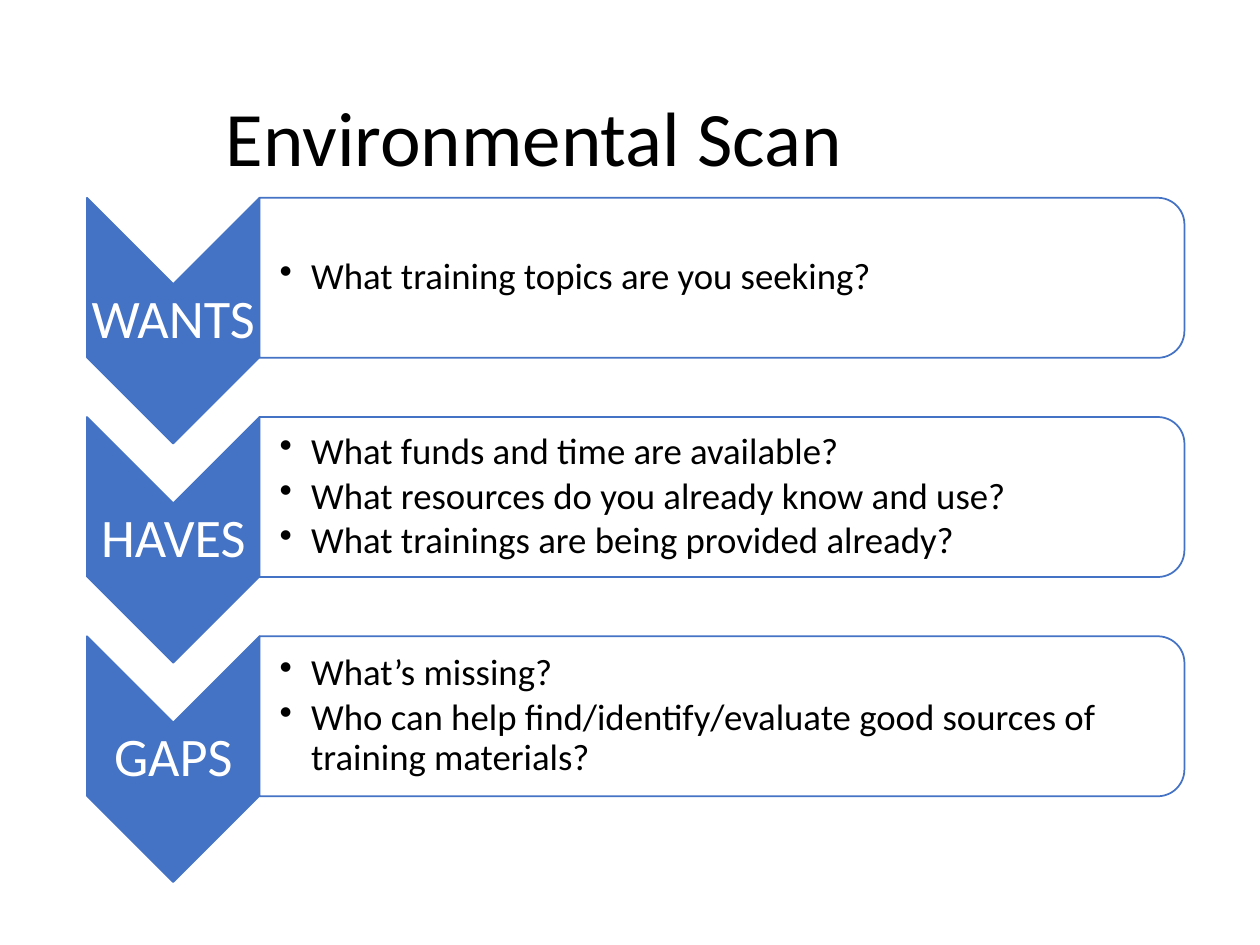
from dataclasses import dataclass

from lxml import etree
from pptx import Presentation
from pptx.dml.color import RGBColor
from pptx.enum.shapes import MSO_SHAPE
from pptx.enum.text import MSO_ANCHOR, PP_ALIGN
from pptx.oxml.ns import qn
from pptx.util import Inches, Pt

CHEVRON = MSO_SHAPE.CHEVRON
PANEL = MSO_SHAPE.ROUND_2_SAME_RECTANGLE
MIDDLE = MSO_ANCHOR.MIDDLE
LEFT, CENTER = PP_ALIGN.LEFT, PP_ALIGN.CENTER

FONT = "Calibri"
BLUE, WHITE, BLACK = "4472C4", "FFFFFF", "000000"

# Grid in inches: a chevron column, a panel column and equal row steps.
CHEVRON_LEFT, CHEVRON_WIDTH, CHEVRON_HEIGHT = 0.69, 1.37, 1.95
PANEL_LEFT = CHEVRON_LEFT + CHEVRON_WIDTH
PANEL_WIDTH, PANEL_HEIGHT = 7.34, 1.27
FIRST_ROW, ROW_STEP = 1.57, 1.74
LABEL_HEIGHT = CHEVRON_HEIGHT - CHEVRON_WIDTH
PANEL_INSET = 0.06


@dataclass
class Box:
    left: float
    top: float
    width: float
    height: float

    def lengths(self):
        return [Inches(n) for n in (self.left, self.top, self.width, self.height)]

    def before_quarter_turn(self) -> "Box":
        """Frame that covers this box once it is rotated by 90 degrees."""
        shift = (self.width - self.height) / 2
        return Box(self.left + shift, self.top - shift, self.height, self.width)


@dataclass
class Step:
    label: str
    questions: list[str]


STEPS = [
    Step("WANTS", ["What training topics are you seeking?"]),
    Step("HAVES", [
        "What funds and time are available?",
        "What resources do you already know and use?",
        "What trainings are being provided already?",
    ]),
    Step("GAPS", [
        "What’s missing?",
        "Who can help find/identify/evaluate good sources of training materials?",
    ]),
]


def color(value: str) -> RGBColor:
    return RGBColor.from_string(value)


def add_turned_shape(slide, preset, box: Box, fill: str, opacity: int = 100):
    shape = slide.shapes.add_shape(preset, *box.before_quarter_turn().lengths())
    shape.rotation = 90
    shape.shadow.inherit = False
    shape.fill.solid()
    shape.fill.fore_color.rgb = color(fill)
    if opacity < 100:
        fill_color = shape.fill._xPr.find(qn("a:solidFill"))[0]
        etree.SubElement(fill_color, qn("a:alpha"), val=str(opacity * 1000))
    shape.line.color.rgb = color(BLUE)
    shape.line.width = Pt(1)


def write(paragraph, text: str, size: float, text_color: str, align) -> None:
    paragraph.alignment = align
    paragraph.line_spacing = 0.9
    run = paragraph.add_run()
    run.text = text
    run.font.name = FONT
    run.font.size = Pt(size)
    run.font.color.rgb = color(text_color)


def indent(paragraph, margin: float, first_line: float = 0) -> None:
    properties = paragraph._p.get_or_add_pPr()
    properties.set("marL", str(Inches(margin)))
    properties.set("indent", str(Inches(first_line)))


def add_bullet(paragraph) -> None:
    indent(paragraph, 0.25, -0.25)
    paragraph.space_after = Pt(3)
    etree.SubElement(paragraph._p.get_or_add_pPr(), qn("a:buChar"), char="•")


def add_text_frame(slide, box: Box, left_inset: float, inset: float):
    frame = slide.shapes.add_textbox(*box.lengths()).text_frame
    frame.word_wrap = True
    frame.vertical_anchor = MIDDLE
    frame.margin_left = Inches(left_inset)
    frame.margin_top = frame.margin_right = frame.margin_bottom = Inches(inset)
    return frame


def add_step(slide, step: Step, top: float) -> None:
    chevron = Box(CHEVRON_LEFT, top, CHEVRON_WIDTH, CHEVRON_HEIGHT)
    add_turned_shape(slide, CHEVRON, chevron, BLUE)
    label_box = Box(CHEVRON_LEFT, top + CHEVRON_WIDTH / 2, CHEVRON_WIDTH, LABEL_HEIGHT)
    label = add_text_frame(slide, label_box, 0.02, 0.02)
    write(label.paragraphs[0], step.label, 31, WHITE, CENTER)

    panel = Box(PANEL_LEFT, top, PANEL_WIDTH, PANEL_HEIGHT)
    add_turned_shape(slide, PANEL, panel, WHITE, opacity=90)
    question_box = Box(PANEL_LEFT, top + PANEL_INSET,
                       PANEL_WIDTH - PANEL_INSET, PANEL_HEIGHT - 2 * PANEL_INSET)
    frame = add_text_frame(slide, question_box, 0.16, 0.01)
    for index, question in enumerate(step.questions):
        paragraph = frame.add_paragraph() if index else frame.paragraphs[0]
        paragraph.level = 1
        write(paragraph, question, 21, BLACK, LEFT)
        add_bullet(paragraph)


def add_title(slide, text: str) -> None:
    title = slide.shapes.title
    title.left, title.top, title.width, title.height = Box(0.69, 0.4, 8.62, 1.45).lengths()
    title.text_frame.vertical_anchor = MIDDLE
    paragraph = title.text_frame.paragraphs[0]
    write(paragraph, text, 44, BLACK, LEFT)
    indent(paragraph, 1)


def main() -> None:
    presentation = Presentation()
    presentation.slide_width, presentation.slide_height = Inches(10), Inches(7.5)
    slide = presentation.slides.add_slide(presentation.slide_layouts.get_by_name("Title Only"))
    add_title(slide, "Environmental Scan")
    for row, step in enumerate(STEPS):
        add_step(slide, step, FIRST_ROW + row * ROW_STEP)
    presentation.save("out.pptx")


if __name__ == "__main__":
    main()
